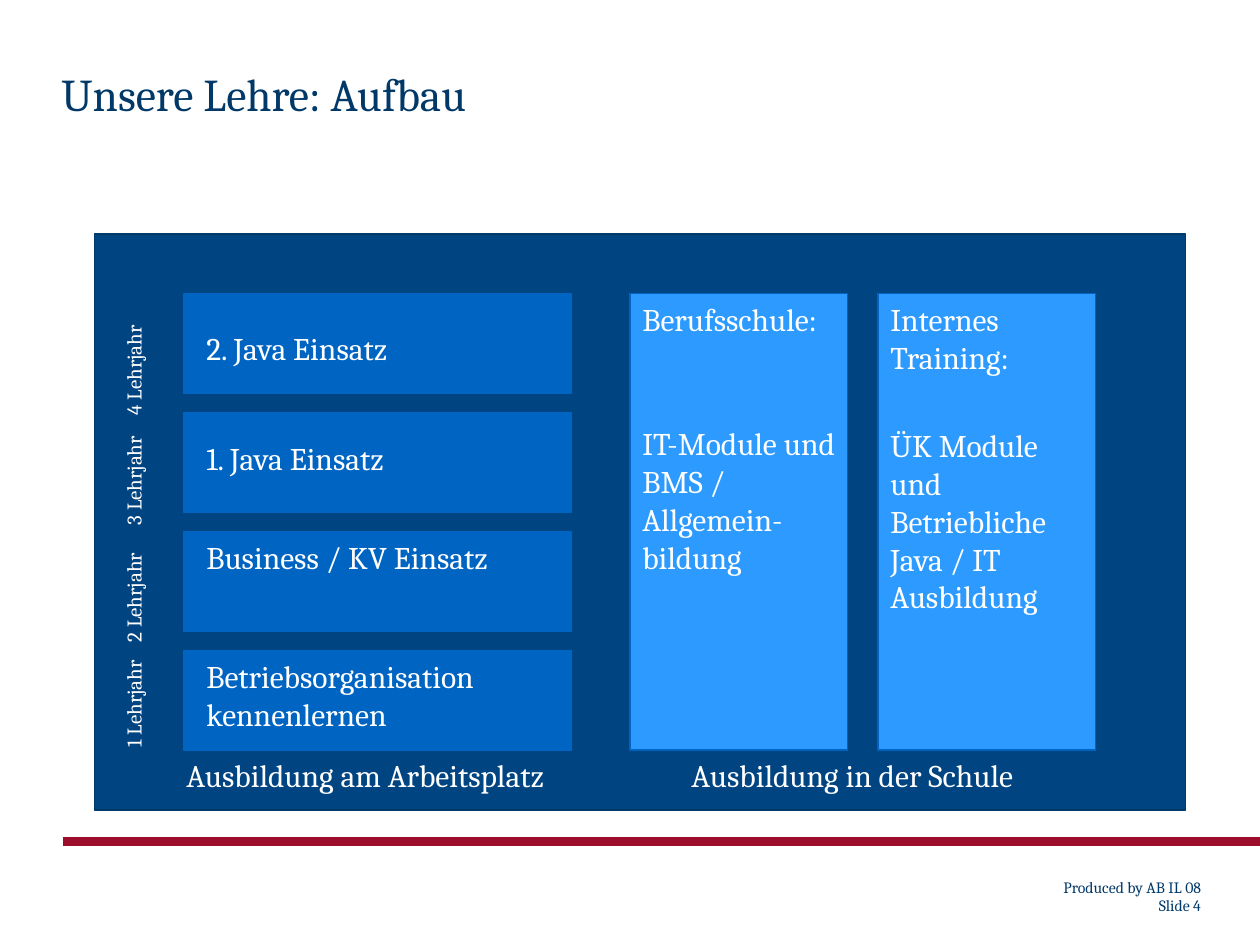
from lxml.etree import SubElement
from pptx import Presentation
from pptx.dml.color import RGBColor
from pptx.enum.shapes import MSO_CONNECTOR as Conn, MSO_SHAPE as Shp
from pptx.enum.text import MSO_ANCHOR as Anchor, PP_ALIGN as Align
from pptx.oxml.ns import qn
from pptx.util import Cm, Pt

NAVY, WHITE, PANEL, MID, LIGHT, RED = "003868", "FFFFFF", "004482", "0065C2", "2C9AFF", "9D0E2D"

TITLE = "Unsere Lehre: Aufbau"
FOOTER = ["Produced by AB IL 08", "Slide 4"]
STAGES = [
    ("2. Java Einsatz", 0.58),
    ("1. Java Einsatz", 0.41),
    ("Business / KV Einsatz", 0),
    ("Betriebsorganisation kennenlernen", 0),
]
SCHOOLS = [
    (["Berufsschule:", "IT-Module und BMS / Allgemein-bildung"], 49.5),
    (["Internes Training:", "ÜK Module und Betriebliche Java / IT Ausbildung"], 29),
]
CAPTIONS = [("Ausbildung am Arbeitsplatz", 3.51, 8.61), ("Ausbildung in der Schule", 13.69, 7.6)]
YEARS = ["1 Lehrjahr", "2 Lehrjahr", "3 Lehrjahr", "4 Lehrjahr"]
YEAR_TABS = [2.12, 4.48, 6.7]

TOP, BAR_X, BAR_W, BAR_H, BAR_STEP = 5.92, 3.71, 7.8, 2.01, 2.4
COL_X, COL_W, COL_H, COL_STEP = 12.7, 4.39, 9.2, 5


def color(value):
    return RGBColor.from_string(value)


def box(s, x, y, w, h, fill, line):
    sp = s.shapes.add_shape(Shp.RECTANGLE, Cm(x), Cm(y), Cm(w), Cm(h))
    sp.shadow.inherit = False
    sp.fill.solid()
    sp.fill.fore_color.rgb = color(fill)
    sp.line.color.rgb = color(line)
    sp.line.width = Pt(0.75)


def text(s, x, y, w, h, lines, size=18, ink=WHITE, gap=0, frame=None, para=None, tabs=()):
    tf = s.shapes.add_textbox(Cm(x), Cm(y), Cm(w), Cm(h)).text_frame
    for name, value in {"word_wrap": True, **(frame or {})}.items():
        setattr(tf, name, value)
    for i, line in enumerate(lines):
        p = tf.paragraphs[0] if i == 0 else tf.add_paragraph()
        if tabs:
            tab_list = SubElement(p._p.get_or_add_pPr(), qn("a:tabLst"))
            for pos in tabs:
                SubElement(tab_list, qn("a:tab"), pos=str(Cm(pos)), algn="l")
        for name, value in (para or {}).items():
            setattr(p, name, value)
        if i and gap:
            p.space_before = Pt(gap)
        r = p.add_run()
        r.text = line
        for name, value in {"name": "Cambria", "size": Pt(size)}.items():
            setattr(r.font, name, value)
        r.font.color.rgb = color(ink)
    return tf


def main():
    prs = Presentation()
    prs.slide_width, prs.slide_height = Cm(25.4), Cm(19.05)
    s = prs.slides.add_slide(prs.slide_layouts[6])

    rule = s.shapes.add_connector(Conn.STRAIGHT, Cm(1.27), Cm(16.97), Cm(25.4), Cm(16.97))
    rule.line.color.rgb = color(RED)
    rule.line.width = Pt(5)
    SubElement(rule._element.spPr, qn("a:effectLst"))

    flat = {"margin_left": 0, "margin_right": 0}
    text(s, 19.33, 17.58, 4.88, 0.99, FOOTER, 9, NAVY,
         frame={**flat, "vertical_anchor": Anchor.BOTTOM},
         para={"alignment": Align.RIGHT, "line_spacing": 0.94})
    text(s, 1.24, 1.47, 22.89, 0.86, [TITLE], 26, NAVY,
         frame={**flat, "margin_top": 0, "margin_bottom": 0}, para={"line_spacing": Pt(27)})

    box(s, 1.9, 4.72, 22, 11.61, PANEL, NAVY)
    for i, (label, drop) in enumerate(STAGES):
        y = TOP + i * BAR_STEP
        box(s, BAR_X, y, BAR_W, BAR_H, MID, MID)
        text(s, BAR_X + 0.2, y + drop, 6.4, 1.02, [label])
    for i, (lines, gap) in enumerate(SCHOOLS):
        x = COL_X + i * COL_STEP
        box(s, x, TOP, COL_W, COL_H, LIGHT, MID)
        text(s, x, TOP, COL_W, 6.5, lines, gap=gap)
    for label, x, w in CAPTIONS:
        text(s, x, 15.11, w, 1.02, [label])

    years = text(s, 2.31, 4.17, 1.02, 11.15, ["\t".join(YEARS)], 12, tabs=YEAR_TABS)
    years._txBody.bodyPr.set("vert", "vert270")

    prs.save("out.pptx")


if __name__ == "__main__":
    main()
